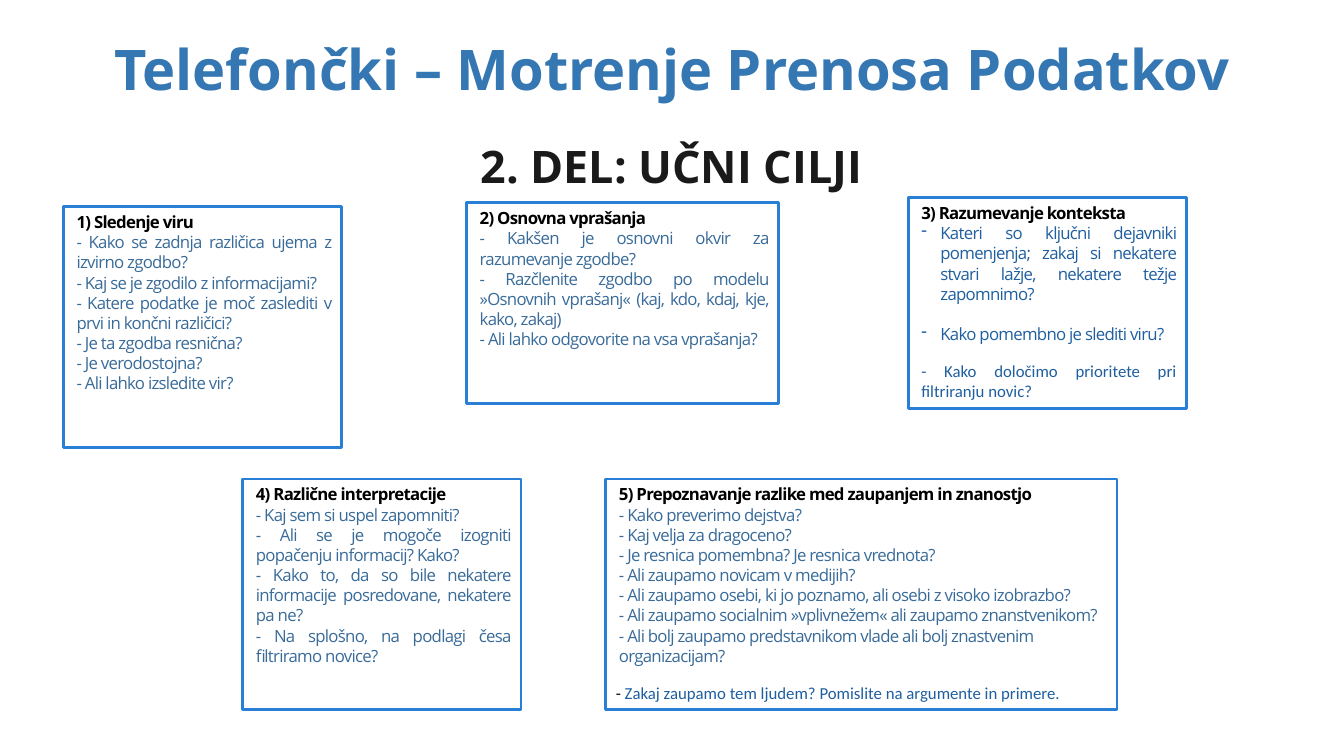
from lxml.etree import SubElement
from pptx import Presentation
from pptx.dml.color import RGBColor
from pptx.enum.shapes import MSO_SHAPE as Shape
from pptx.enum.text import MSO_ANCHOR as Anchor, MSO_AUTO_SIZE as Fit, PP_ALIGN as Align
from pptx.oxml.ns import qn
from pptx.util import Cm, Pt

SKY = RGBColor(0x34, 0x77, 0xB2)
INK = RGBColor(0x1A, 0x1A, 0x1A)
BLACK = RGBColor(0, 0, 0)
WHITE = RGBColor(0xFF, 0xFF, 0xFF)
EDGE = RGBColor(0x29, 0x7F, 0xD5)
STEEL = RGBColor(0x39, 0x6B, 0x99)
BLUE = RGBColor(0x1F, 0x5F, 0xA0)

TITLE = "Telefončki – Motrenje Prenosa Podatkov"
PART = "2. DEL: UČNI CILJI"

# A line is plain text, or text with its own format
BULLET = dict(bullet="-", color=BLUE)
NOTE = dict(font="Calibri", color=BLUE, track=0)
GOALS = [
    ((1.6, 5.21, 7.01, 6.07), "1) Sledenje viru", [
        "- Kako se zadnja različica ujema z izvirno zgodbo?",
        "- Kaj se je zgodilo z informacijami?",
        "- Katere podatke je moč zaslediti v prvi in končni različici?",
        "- Je ta zgodba resnična?",
        "- Je verodostojna?",
        "- Ali lahko izsledite vir?",
    ]),
    ((11.76, 5.11, 7.87, 5.05), "2) Osnovna vprašanja", [
        "- Kakšen je osnovni okvir za razumevanje zgodbe?",
        "- Razčlenite zgodbo po modelu »Osnovnih vprašanj« (kaj, kdo, kdaj, kje, kako, zakaj)",
        "- Ali lahko odgovorite na vsa vprašanja?",
    ]),
    ((22.89, 4.98, 7.01, 5.31), "3) Razumevanje konteksta", [
        ("Kateri so ključni dejavniki pomenjenja; zakaj si nekatere stvari lažje, "
         "nekatere težje zapomnimo?", dict(BULLET, after=14.4)),
        ("Kako pomembno je slediti viru?", dict(BULLET, after=12)),
        ("- Kako določimo prioritete pri filtriranju novic?", NOTE),
    ]),
    ((6.12, 12.07, 7.01, 5.82), "4) Različne interpretacije", [
        "- Kaj sem si uspel zapomniti?",
        "- Ali se je mogoče izogniti popačenju informacij? Kako?",
        "- Kako to, da so bile nekatere informacije posredovane, nekatere pa ne?",
        "- Na splošno, na podlagi česa filtriramo novice?",
    ]),
    ((15.27, 12.07, 12.88, 5.82), "5) Prepoznavanje razlike med zaupanjem in znanostjo", [
        "- Kako preverimo dejstva?",
        "- Kaj velja za dragoceno?",
        "- Je resnica pomembna? Je resnica vrednota?",
        "- Ali zaupamo novicam v medijih?",
        "- Ali zaupamo osebi, ki jo poznamo, ali osebi z visoko izobrazbo?",
        "- Ali zaupamo socialnim »vplivnežem« ali zaupamo znanstvenikom?",
        ("- Ali bolj zaupamo predstavnikom vlade ali bolj znastvenim organizacijam?",
         dict(align=Align.LEFT, after=12)),
        ("Zakaj zaupamo tem ljudem? Pomislite na argumente in primere.",
         dict(NOTE, lead="- ", align=Align.LEFT, left=0)),
    ]),
]


def write(frame, text, size=12, font="Open Sans", color=STEEL, bold=False, track=-50,
          align=Align.JUSTIFY, spacing=Pt(14.4), after=0, left=0.08, bullet=None, lead=""):
    """Add a paragraph; track is in hundredths of a point, lead is a black prefix."""
    para = frame.paragraphs[0]
    if para.runs:
        para = frame.add_paragraph()
    props = para._p.get_or_add_pPr()
    props.set("marL", str(Cm(0.56 if bullet else left)))
    props.set("indent", str(Cm(-0.48 if bullet else 0)))
    if bullet:
        SubElement(props, qn("a:buChar")).set("char", bullet)
    else:
        SubElement(props, qn("a:buNone"))
    para.alignment = align
    para.line_spacing = spacing
    para.space_before, para.space_after = Pt(0), Pt(after)
    for part, shade in ((lead, BLACK), (text, color)):
        if part:
            run = para.add_run()
            run.text = part
            run.font.size, run.font.name, run.font.bold = Pt(size), font, bold
            run.font.color.rgb = shade
            run._r.get_or_add_rPr().set("spc", str(track))


def place(shape, spot):
    shape.left, shape.top, shape.width, shape.height = map(Cm, spot)


def set_frame(shape, top):
    frame = shape.text_frame
    frame.word_wrap = True
    frame.auto_size = Fit.NONE
    frame.vertical_anchor = Anchor.TOP
    frame.margin_top = Cm(top)
    return frame


def add_goal(slide, spot, head, lines):
    box = slide.shapes.add_shape(Shape.RECTANGLE, *map(Cm, spot))
    box.shadow.inherit = False
    box.fill.solid()
    box.fill.fore_color.rgb = WHITE
    box.line.color.rgb = EDGE
    box.line.width = Pt(2)
    frame = set_frame(box, 0.13)
    write(frame, head, color=BLACK, bold=True)
    for line in lines:
        text, form = (line, {}) if isinstance(line, str) else line
        write(frame, text, **form)


def main():
    deck = Presentation()
    deck.slide_width, deck.slide_height = Cm(33.87), Cm(19.05)
    slide = deck.slides.add_slide(deck.slide_layouts[1])
    title, body = slide.shapes.title, slide.placeholders[1]
    place(title, (1.45, 0.81, 30.96, 2.92))
    place(body, (1.45, 3.23, 30.96, 14.12))
    large = dict(bold=True, track=0, align=Align.CENTER, left=0)
    write(set_frame(title, 0.05), TITLE, size=40, color=SKY, spacing=1.0, **large)
    write(set_frame(body, 0), PART, size=32, color=INK, spacing=1.2, **large)
    for goal in GOALS:
        add_goal(slide, *goal)
    deck.save("out.pptx")


if __name__ == "__main__":
    main()
